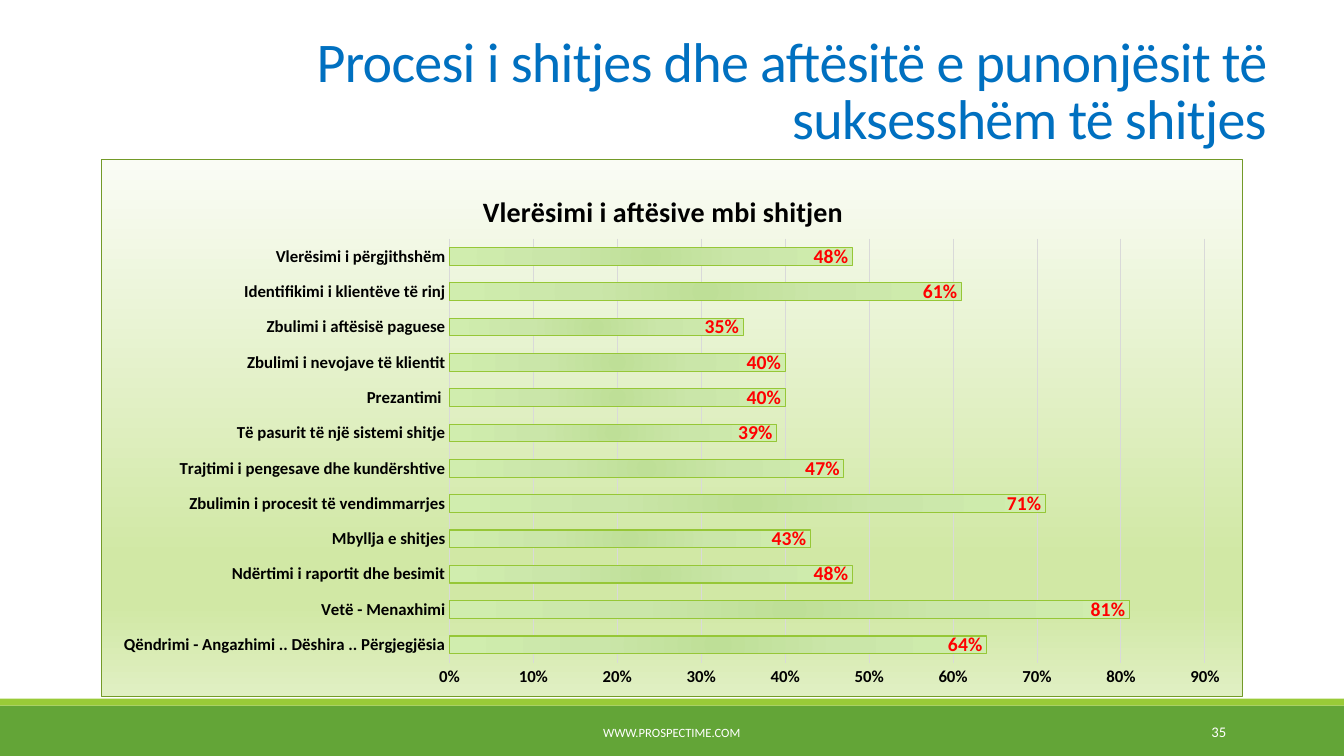
"""Build the slide on sales skills with its bar chart of scores."""
from dataclasses import dataclass

from pptx import Presentation
from pptx import util as u
from pptx.chart.data import CategoryChartData
from pptx.dml.color import RGBColor
from pptx.enum import chart as charts, shapes, text
from pptx.oxml import ns, parse_xml


@dataclass(frozen=True)
class Theme:
    font: str = "Calibri"
    title: str = "0070C0"
    footer: str = "FFFFFF"
    band: str = "63A537"
    stripe: str = "99CB38"
    ink: str = "000000"
    grid: str = "D9D9D9"
    value: str = "FF0000"
    bar_line: str = "96C737"
    border: str = "739A28"
    panel_stops: tuple = ((0, "FAFCF5"), (74, "D1E8A5"), (83, "D1E8A5"), (100, "E0EFC3"))
    bar_stops: tuple = ((0, "BEDF97"), (45, "CAE6A9"), (100, "D0EDAE"))
    title_size: float = 40
    heading_size: float = 20
    value_size: float = 14
    axis_size: float = 12
    chart_size: float = 10
    number_size: float = 10.5
    footer_size: float = 9
    line_width: float = 0.75


SCORES = {
    "Qëndrimi - Angazhimi .. Dëshira .. Përgjegjësia": 0.64,
    "Vetë - Menaxhimi": 0.81,
    "Ndërtimi i raportit dhe besimit": 0.48,
    "Mbyllja e shitjes": 0.43,
    "Zbulimin i procesit të vendimmarrjes": 0.71,
    "Trajtimi i pengesave dhe kundërshtive": 0.47,
    "Të pasurit të një sistemi shitje": 0.39,
    "Prezantimi ": 0.40,
    "Zbulimi i nevojave të klientit": 0.40,
    "Zbulimi i aftësisë paguese": 0.35,
    "Identifikimi i klientëve të rinj": 0.61,
    "Vlerësimi i përgjithshëm": 0.48,
}


def points(*lengths):
    return [u.Pt(length) for length in lengths]


def style_font(font, name, size, color, bold=False):
    font.name, font.size, font.bold = name, u.Pt(size), bold
    font.color.rgb = RGBColor.from_string(color)


def style_line(line, color, width):
    line.color.rgb = RGBColor.from_string(color)
    line.width = u.Pt(width)


def write(frame, content, *, font, size, color, bold=False, align=None,
          line_spacing=None, tracking=None):
    paragraph = frame.paragraphs[0]
    run = paragraph.add_run()
    run.text = content
    style_font(run.font, font, size, color, bold)
    if align is not None:
        paragraph.alignment = align
    if line_spacing is not None:
        paragraph.line_spacing = line_spacing
    if tracking is not None:
        run.font._element.set("spc", str(int(tracking * 100)))


def gradient(stops, direction):
    marks = "".join(
        f'<a:gs pos="{position * 1000}"><a:srgbClr val="{color}"/></a:gs>'
        for position, color in stops)
    return f'<a:gradFill {ns.nsdecls("a")}><a:gsLst>{marks}</a:gsLst>{direction}</a:gradFill>'


def place(element, index, **fractions):
    for layout in element.findall(ns.qn("c:layout")):
        element.remove(layout)
    target = '<c:layoutTarget val="inner"/>' if "w" in fractions else ""
    modes = "".join(f'<c:{axis}Mode val="edge"/>' for axis in "xy")
    sizes = "".join(f'<c:{key} val="{value}"/>' for key, value in fractions.items())
    element.insert(index, parse_xml(
        f'<c:layout {ns.nsdecls("c")}><c:manualLayout>{target}{modes}{sizes}'
        '</c:manualLayout></c:layout>'))


class SlideBuilder:
    def __init__(self, presentation, theme):
        self.theme = theme
        self.slide = presentation.slides.add_slide(presentation.slide_layouts[5])

    def band(self, left, top, width, height, color):
        shape = self.slide.shapes.add_shape(
            shapes.MSO_SHAPE.RECTANGLE, *points(left, top, width, height))
        shape.shadow.inherit = False
        shape.fill.solid()
        shape.fill.fore_color.rgb = RGBColor.from_string(color)
        shape.line.fill.background()

    def title(self, content, left, top, width, height):
        shape = self.slide.shapes.title
        shape.left, shape.top, shape.width, shape.height = points(left, top, width, height)
        frame = shape.text_frame
        frame.word_wrap = True
        frame.auto_size = text.MSO_AUTO_SIZE.NONE
        frame.vertical_anchor = text.MSO_ANCHOR.BOTTOM
        write(frame, content, font=self.theme.font, size=self.theme.title_size,
              color=self.theme.title, align=text.PP_ALIGN.RIGHT,
              line_spacing=0.85, tracking=-0.5)

    def label(self, content, left, top, width, height, size, align):
        shape = self.slide.shapes.add_textbox(*points(left, top, width, height))
        frame = shape.text_frame
        frame.word_wrap = True
        frame.vertical_anchor = text.MSO_ANCHOR.MIDDLE
        write(frame, content, font=self.theme.font, size=size,
              color=self.theme.footer, align=align)

    def bar_chart(self, heading, scores, left, top, width, height):
        theme = self.theme
        data = CategoryChartData(number_format="0%")
        data.categories = list(scores)
        data.add_series("Series 1", list(scores.values()))
        chart = self.slide.shapes.add_chart(
            charts.XL_CHART_TYPE.BAR_CLUSTERED, *points(left, top, width, height), data).chart
        style_font(chart.font, theme.font, theme.chart_size, theme.ink)
        chart.has_legend = False
        chart.has_title = True
        write(chart.chart_title.text_frame, heading, font=theme.font,
              size=theme.heading_size, color=theme.ink, bold=True)
        place(chart.element.find(".//" + ns.qn("c:title")), 1, x=0.33, y=0.05)
        place(chart.element.find(".//" + ns.qn("c:plotArea")), 0,
              x=0.305, y=0.147, w=0.662, h=0.79)
        self.axes(chart)
        self.bars(chart)
        panel = gradient(theme.panel_stops, '<a:lin ang="5400000" scaled="0"/>')
        chart.element.find(ns.qn("c:chart")).addnext(parse_xml(
            f'<c:spPr {ns.nsdecls("c", "a")}>{panel}<a:ln w="{u.Pt(theme.line_width)}">'
            f'<a:solidFill><a:srgbClr val="{theme.border}"/></a:solidFill></a:ln></c:spPr>'))

    def axes(self, chart):
        theme = self.theme
        for axis in (chart.category_axis, chart.value_axis):
            axis.major_tick_mark = axis.minor_tick_mark = charts.XL_TICK_MARK.NONE
            style_font(axis.tick_labels.font, theme.font, theme.axis_size, theme.ink, True)
        style_line(chart.category_axis.format.line, theme.grid, theme.line_width)
        values = chart.value_axis
        values.minimum_scale, values.maximum_scale, values.major_unit = 0, 0.9, 0.1
        values.tick_labels.number_format = "0%"
        values.tick_labels.number_format_is_linked = False
        values.format.line.fill.background()
        values.has_major_gridlines = True
        style_line(values.major_gridlines.format.line, theme.grid, theme.line_width)

    def bars(self, chart):
        theme = self.theme
        plot = chart.plots[0]
        plot.gap_width = 100
        plot.vary_by_categories = False
        series = plot.series[0]
        series.format.fill.gradient()
        fill = chart.element.find(".//" + ns.qn("a:gradFill"))
        corner = " ".join(f'{side}="100000"' for side in "ltrb")
        fill.getparent().replace(fill, parse_xml(gradient(
            theme.bar_stops, f'<a:path path="circle"><a:fillToRect {corner}/></a:path>')))
        style_line(series.format.line, theme.bar_line, theme.line_width)
        labels = series.data_labels
        labels.show_value = True
        labels.position = charts.XL_LABEL_POSITION.INSIDE_END
        labels.number_format = "0%"
        labels.number_format_is_linked = False
        style_font(labels.font, theme.font, theme.value_size, theme.value, True)


def main():
    theme = Theme()
    presentation = Presentation()
    presentation.slide_width, presentation.slide_height = points(960, 540)
    builder = SlideBuilder(presentation, theme)
    builder.band(0, 504, 960, 36, theme.band)
    builder.band(0, 499, 960, 5, theme.stripe)
    builder.title("Procesi i shitjes dhe aftësitë e punonjësit të suksesshëm të shitjes",
                  162, 21.6, 750, 90)
    builder.label("WWW.PROSPECTIME.COM", 290, 508.5, 379.5, 28.8,
                  theme.footer_size, text.PP_ALIGN.CENTER)
    builder.label("35", 780, 508.5, 103, 28.8, theme.number_size, text.PP_ALIGN.RIGHT)
    builder.bar_chart("Vlerësimi i aftësive mbi shitjen", SCORES, 72, 113.8, 816, 384)
    presentation.save("out.pptx")


if __name__ == "__main__":
    main()
